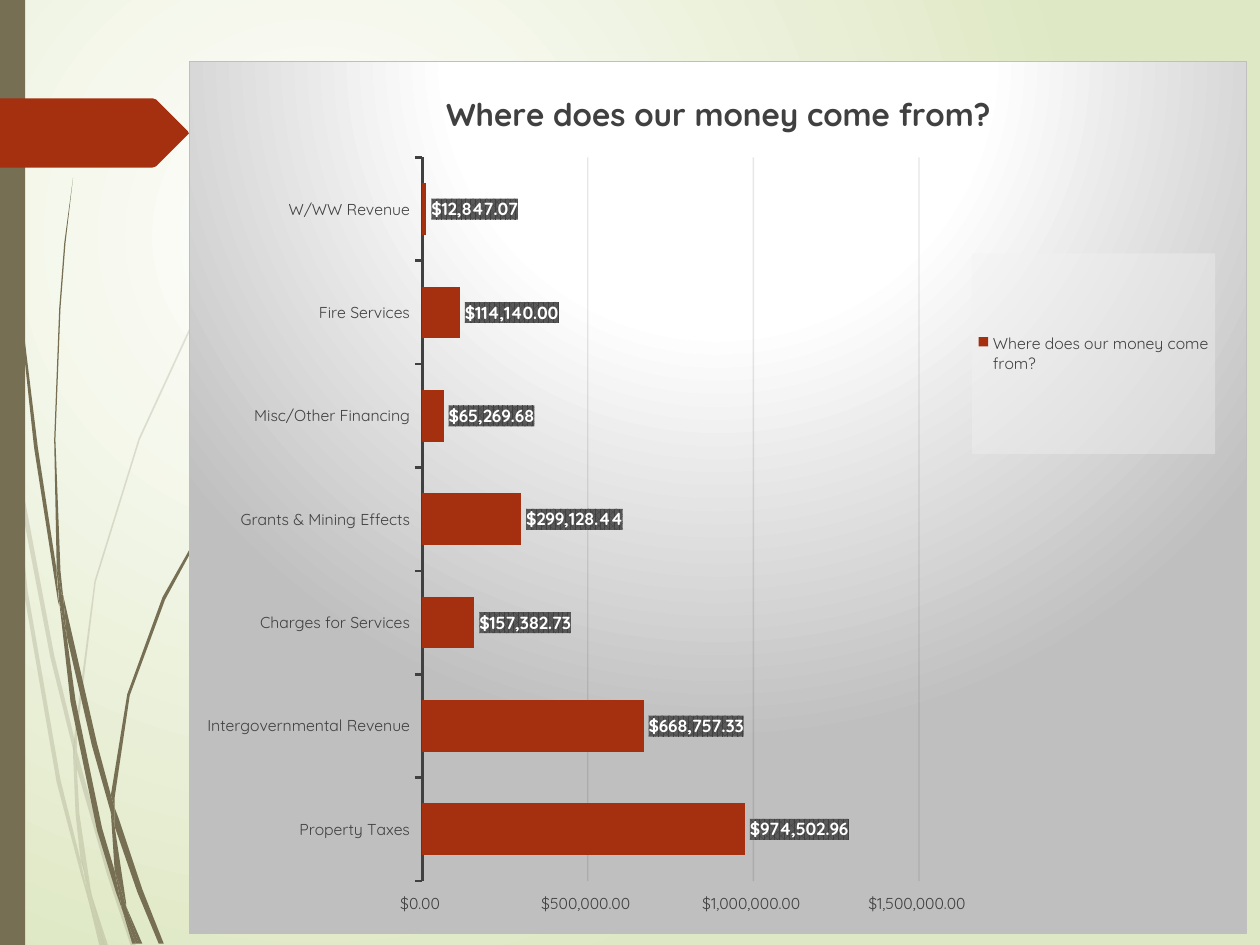
from lxml import etree
from pptx import Presentation
from pptx.chart.data import CategoryChartData
from pptx.dml.color import RGBColor
from pptx.enum.chart import XL_CHART_TYPE, XL_LABEL_POSITION, XL_LEGEND_POSITION, XL_TICK_MARK
from pptx.enum.shapes import MSO_SHAPE
from pptx.oxml import parse_xml
from pptx.oxml.ns import qn
from pptx.util import Pt

BAR = XL_CHART_TYPE.BAR_CLUSTERED
OUTSIDE_END = XL_LABEL_POSITION.OUTSIDE_END
RIGHT = XL_LEGEND_POSITION.RIGHT
TICK_OUT = XL_TICK_MARK.OUTSIDE
RECT = MSO_SHAPE.RECTANGLE

COLORS = {"white": "FFFFFF", "sage": "DFE8C4", "olive": "766F54", "rust": "A53010",
          "text": "404040", "grid": "0D0D0D", "gray": "BFBFBF", "label": "595959",
          "legend": "F2F2F2", "black": "000000"}
FONT = "Quicksand"
UNIT = Pt(0.72)  # outlines are given in hundredths of an inch
NS = ('xmlns:a="http://schemas.openxmlformats.org/drawingml/2006/main" '
      'xmlns:c="http://schemas.openxmlformats.org/drawingml/2006/chart"')

TITLE = "Where does our money come from?"
REVENUE = {"Property Taxes": 974502.96, "Intergovernmental Revenue": 668757.33,
           "Charges for Services": 157382.73, "Grants & Mining Effects": 299128.44,
           "Misc/Other Financing": 65269.68, "Fire Services": 114140, "W/WW Revenue": 12847.07}

PALE_WISPS = [
    [(8, 350), (6, 322), (0, 282), (0, 299), (7, 344)],
    [(40, 522), (59, 599), (59, 586), (43, 520), (10, 345), (12, 376)],
    [(64, 607), (61, 596), (61, 610), (85, 694), (104, 751), (108, 751), (88, 692)],
    [(83, 751), (86, 751), (73, 711)],
    [(64, 683), (48, 619), (22, 469), (12, 376), (8, 350), (19, 470), (45, 621),
     (64, 693), (70, 714), (69, 707)],
    [(58, 599), (60, 646), (64, 683), (67, 692), (73, 711), (72, 706), (63, 646),
     (61, 610), (61, 608)],
    [(61, 584), (76, 462), (111, 349), (159, 245), (187, 198), (201, 175), (217, 154),
     (217, 153), (201, 175), (186, 197), (158, 244), (110, 348), (75, 461), (59, 584),
     (59, 586), (61, 596)],
    [(70, 714), (79, 751), (82, 751)],
    [(61, 608), (61, 610), (61, 596), (59, 586), (58, 599)],
    [(67, 692), (65, 683), (69, 707), (70, 714), (82, 751), (83, 751), (73, 711)],
]
DARK_WISPS = [
    [(5, 110), (14, 233), (27, 355), (46, 477), (47, 481), (45, 457), (45, 453), (30, 355),
     (15, 232), (6, 109), (4, 48), (3, 0), (2, 0), (3, 48)],
    [(73, 592), (88, 645), (88, 633), (88, 631), (77, 590), (50, 472), (53, 505)],
    [(94, 649), (91, 641), (91, 656), (109, 708), (126, 749), (130, 749), (113, 706)],
    [(91, 691), (81, 657), (60, 556), (53, 505), (47, 477), (56, 557), (77, 659),
     (92, 708), (97, 722), (96, 717)],
    [(50, 472), (48, 453), (44, 349), (48, 245), (52, 193), (58, 141), (51, 193),
     (47, 245), (43, 349), (45, 449), (49, 472)],
    [(110, 749), (113, 749), (100, 719)],
    [(47, 477), (53, 505), (50, 472), (49, 472), (45, 449), (45, 453)],
    [(91, 633), (103, 552), (131, 476), (169, 406), (191, 374), (203, 359), (216, 344),
     (215, 344), (203, 358), (191, 373), (168, 405), (129, 474), (101, 551), (88, 631),
     (91, 641)],
    [(97, 722), (105, 749), (108, 749)],
    [(88, 645), (91, 691), (96, 706), (100, 719), (100, 716), (91, 656), (90, 651)],
    [(88, 645), (90, 651), (91, 656), (91, 641), (88, 631), (88, 633)],
    [(96, 706), (91, 691), (96, 717), (97, 722), (108, 749), (110, 749), (100, 719)],
]
ARROW_TAB = [(149, 107), (124, 132), (121, 133), (0, 133), (0, 78), (121, 78), (124, 79),
             (149, 104), (149.5, 105.5)]


def rgb(name):
    return RGBColor.from_string(COLORS[name])


def color_xml(name, alpha=100):
    return f'<a:srgbClr val="{COLORS[name]}"><a:alpha val="{alpha * 1000}"/></a:srgbClr>'


def solid_xml(name, alpha=100):
    return f"<a:solidFill>{color_xml(name, alpha)}</a:solidFill>"


def radial_xml(stops, **focus):
    """Circular gradient; focus holds the l, t, r, b insets in percent."""
    gs = "".join(f'<a:gs pos="{pos * 1000}">{color_xml(name)}</a:gs>' for pos, name in stops)
    rect = " ".join(f'{side}="{v * 1000}"' for side, v in focus.items())
    return (f'<a:gradFill {NS} rotWithShape="1"><a:gsLst>{gs}</a:gsLst>'
            f'<a:path path="circle"><a:fillToRect {rect}/></a:path></a:gradFill>')


def chart_fill(inner):
    return parse_xml(f"<c:spPr {NS}>{inner}</c:spPr>")


def set_layout(parent, before, x, y, w, h, target=""):
    """Fix the place of a chart part, in fractions of the chart."""
    for old in parent.findall(qn("c:layout")):
        parent.remove(old)
    vals = "".join(f'<c:{k} val="{v}"/>' for k, v in zip("xywh", (x, y, w, h)))
    modes = '<c:xMode val="edge"/><c:yMode val="edge"/>'
    parent.find(qn(before)).addprevious(parse_xml(
        f"<c:layout {NS}><c:manualLayout>{target}{modes}{vals}</c:manualLayout></c:layout>"))


def set_font(font, size, color="text", bold=False):
    font.name, font.size, font.bold = FONT, Pt(size), bold
    font.color.rgb = rgb(color)


def add_text(tf, text, **fmt):
    r = tf.paragraphs[0].add_run()
    r.text = text
    set_font(r.font, **fmt)


class SlideBuilder:
    def __init__(self, slide):
        self.s = slide

    def background(self, stops, **focus):
        self.s.background.fill.solid()
        bg = self.s._element.find(".//" + qn("p:bgPr"))
        bg.replace(bg[0], parse_xml(radial_xml(stops, **focus)))

    def paint(self, sp, color, alpha=100):
        sp.shadow.inherit = False
        sp.line.fill.background()
        sp.fill.solid()
        sp.fill.fore_color.rgb = rgb(color)
        if alpha < 100:
            clr = sp._element.spPr.find(qn("a:solidFill"))[0]
            etree.SubElement(clr, qn("a:alpha")).set("val", str(alpha * 1000))

    def rect(self, x, y, w, h, color):
        self.paint(self.s.shapes.add_shape(RECT, Pt(x), Pt(y), Pt(w), Pt(h)), color)

    def outline(self, points, color, alpha=100, shapes=None):
        fb = (shapes or self.s.shapes).build_freeform(*points[0], scale=UNIT)
        fb.add_line_segments(points[1:], close=True)
        self.paint(fb.convert_to_shape(), color, alpha)

    def wisps(self, outlines, alpha):
        group = self.s.shapes.add_group_shape()
        for points in outlines:
            self.outline(points, "olive", alpha, group.shapes)

    def bar_chart(self, x, y, w, h, title, values):
        data = CategoryChartData()
        data.categories = list(values)
        data.add_series(title, list(values.values()))
        chart = self.s.shapes.add_chart(BAR, Pt(x), Pt(y), Pt(w), Pt(h), data).chart
        set_font(chart.font, 10, "black")
        chart.has_title = True
        add_text(chart.chart_title.text_frame, title, size=18, bold=True)
        chart.chart_title.include_in_layout = False
        stops = [(0, "white"), (39, "white"), (100, "gray")]
        chart._chartSpace.find(qn("c:chart")).addnext(chart_fill(
            radial_xml(stops, l=50, t=-80, r=50, b=180)
            + f'<a:ln w="{Pt(0.75)}">{solid_xml("gray")}</a:ln>'))
        set_layout(chart._chartSpace.find(".//" + qn("c:plotArea")), "c:barChart",
                   0.22, 0.11, 0.47, 0.83, '<c:layoutTarget val="inner"/>')
        self.format_bars(chart.plots[0])
        self.format_axes(chart.category_axis, chart.value_axis)
        self.format_legend(chart)

    def format_bars(self, plot):
        plot.gap_width, plot.overlap, plot.vary_by_categories = 100, -100, False
        ser = plot.series[0]
        ser.invert_if_negative = False
        ser.format.fill.solid()
        ser.format.fill.fore_color.rgb = rgb("rust")
        labels = ser.data_labels
        labels.show_value = True
        labels.position = OUTSIDE_END
        labels.number_format, labels.number_format_is_linked = '"$"#,##0.00', False
        set_font(labels.font, 10, "white", bold=True)
        labels._element.find(qn("c:txPr")).addprevious(chart_fill(
            f'<a:pattFill prst="pct75"><a:fgClr>{color_xml("text")}</a:fgClr>'
            f'<a:bgClr>{color_xml("label")}</a:bgClr></a:pattFill>'))

    def format_axes(self, cat, val):
        for axis in (cat, val):
            axis.major_tick_mark = TICK_OUT
            set_font(axis.tick_labels.font, 9)
        cat.has_major_gridlines = False
        cat.format.line.color.rgb = rgb("text")
        cat.format.line.width = Pt(1.5)
        val.minimum_scale, val.maximum_scale, val.major_unit = 0, 1500000, 500000
        val.format.line.fill.background()
        val.tick_labels.number_format = r'"$"#,##0.00_);[Red]\("$"#,##0.00\)'
        val.tick_labels.number_format_is_linked = False
        grid = val.major_gridlines.format.line
        grid.width = Pt(0.75)
        grid.color.rgb = rgb("grid")
        clr = val.major_gridlines._xAx.find(".//" + qn("c:majorGridlines")).find(
            ".//" + qn("a:srgbClr"))
        etree.SubElement(clr, qn("a:alpha")).set("val", "10000")

    def format_legend(self, chart):
        chart.has_legend = True
        chart.legend.position = RIGHT
        chart.legend.include_in_layout = False
        set_font(chart.legend.font, 9)
        legend = chart.legend._element
        set_layout(legend, "c:overlay", 0.74, 0.22, 0.23, 0.23)
        legend.find(qn("c:txPr")).addprevious(chart_fill(solid_xml("legend", 39)))


def main():
    prs = Presentation()
    prs.slide_width, prs.slide_height = Pt(720), Pt(540)
    b = SlideBuilder(prs.slides.add_slide(prs.slide_layouts[6]))
    b.background([(0, "white"), (100, "sage")], l=50, t=50, r=100, b=100)
    b.wisps(PALE_WISPS, alpha=20)
    b.wisps(DARK_WISPS, alpha=100)
    b.rect(0, 0, 14.4, 540, "olive")
    b.outline(ARROW_TAB, "rust")
    b.bar_chart(108, 34.8, 604.8, 499, TITLE, REVENUE)
    prs.save("out.pptx")


if __name__ == "__main__":
    main()
